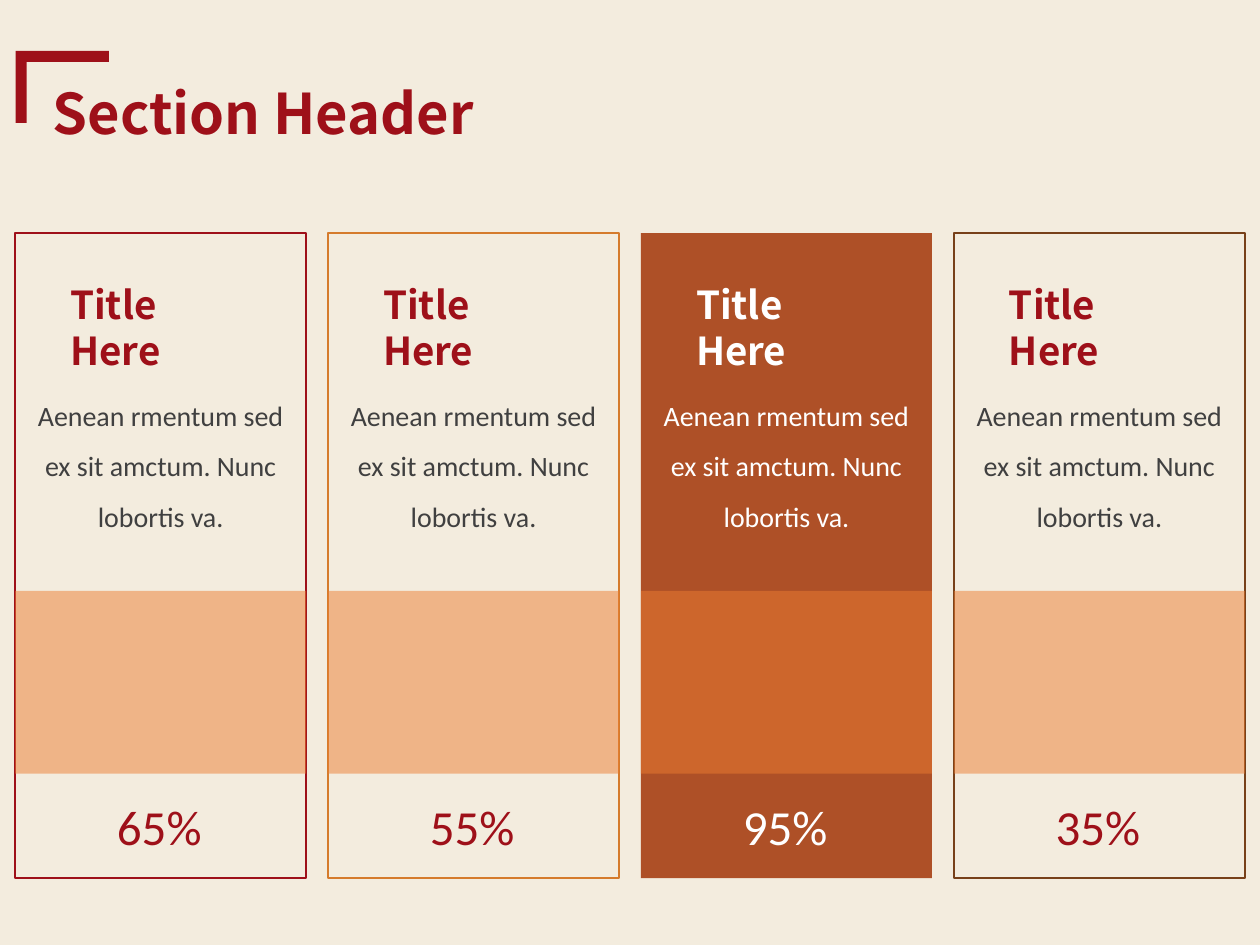
from dataclasses import dataclass

from lxml import etree
from pptx import Presentation
from pptx.dml.color import RGBColor
from pptx.enum.shapes import MSO_SHAPE
from pptx.enum.text import MSO_ANCHOR, MSO_AUTO_SIZE, PP_ALIGN
from pptx.oxml.ns import qn
from pptx.util import Inches, Pt

RECTANGLE = MSO_SHAPE.RECTANGLE
CORNER = MSO_SHAPE.CORNER
LEFT = PP_ALIGN.LEFT
CENTER = PP_ALIGN.CENTER
TOP = MSO_ANCHOR.TOP
GROW = MSO_AUTO_SIZE.SHAPE_TO_FIT_TEXT

TITLE_ONLY = 5
SLIDE_WIDTH = 10
SLIDE_HEIGHT = 7.5
RED = "9E1019"
GREY = "404040"
WHITE = "FFFFFF"
RUST = "AE5027"
ORANGE = "ED7D31"
CREAM = "F3ECDE"

CARD_TOP = 1.85
CARD_WIDTH = 2.31
CARD_HEIGHT = 5.12
SIDE_MARGIN = 0.12


@dataclass
class Card:
    percent: str
    line: str | None = None
    fill: str | None = None
    accent: str = RED
    body: str = GREY


CARDS = [
    Card("65%", line=RED),
    Card("55%", line="D57B2C"),
    Card("95%", fill=RUST, accent=WHITE, body=WHITE),
    Card("35%", line="774019"),
]


def set_color(color_format, value: str):
    color_format.rgb = RGBColor.from_string(value)


def place(shape, left: float, top: float, width: float, height: float):
    shape.left, shape.top = Inches(left), Inches(top)
    shape.width, shape.height = Inches(width), Inches(height)


def write_text(shape, text: str, *, size: float, font: str, color: str, bold: bool = False,
               align=LEFT, spacing: float = 1.0, wrap: bool = True):
    frame = shape.text_frame
    frame.text = text
    frame.word_wrap = wrap
    frame.auto_size = GROW
    frame.vertical_anchor = TOP
    paragraph = frame.paragraphs[0]
    paragraph.alignment = align
    paragraph.line_spacing = spacing
    paragraph.space_before = Pt(0)
    run_font = paragraph.runs[0].font
    run_font.size = Pt(size)
    run_font.name = font
    run_font.bold = bold
    set_color(run_font.color, color)


def add_text(slide, box: tuple, text: str, **text_format):
    shape = slide.shapes.add_textbox(*map(Inches, box))
    write_text(shape, text, **text_format)


def add_box(slide, kind, box: tuple, fill: str | None = None, line: str | None = None,
            opacity: int = 100):
    shape = slide.shapes.add_shape(kind, *map(Inches, box))
    shape.shadow.inherit = False
    if fill:
        shape.fill.solid()
        set_color(shape.fill.fore_color, fill)
        if opacity < 100:
            color = shape.element.spPr.find(qn("a:solidFill"))[0]
            etree.SubElement(color, qn("a:alpha"), val=str(opacity * 1000))
    else:
        shape.fill.background()
    if line:
        set_color(shape.line.color, line)
        shape.line.width = Pt(1.5)
    else:
        shape.line.fill.background()
    return shape


def add_header(slide):
    title = slide.shapes.title
    place(title, 0.32, 0.31, 3.84, 0.8)
    write_text(title, "Section Header", size=32, font="Noto Sans CJK JP",
               color=RED, bold=True, spacing=1.5)
    bracket = add_box(slide, CORNER, (0.21, 0.32, 0.57, 0.74), fill=RED)
    bracket.rotation = 90
    bracket.adjustments[0] = 0.15
    bracket.adjustments[1] = 0.15


def add_card(slide, card: Card, left: float):
    add_box(slide, RECTANGLE, (left, CARD_TOP, CARD_WIDTH, CARD_HEIGHT),
            fill=card.fill, line=card.line)
    add_text(slide, (left + 0.34, 2.18, 1.6, 0.47), "Title Here", size=22,
             font="Noto Sans CJK SC", color=card.accent, bold=True)
    add_text(slide, (left + 0.08, 2.98, 2.15, 1.26),
             "Aenean rmentum sed ex sit amctum. Nunc lobortis va.", size=16,
             font="Calibri", color=card.body, align=CENTER, spacing=1.5)
    add_text(slide, (left + 0.71, 6.27, 0.89, 0.57), card.percent, size=28,
             font="Calibri", color=card.accent, wrap=False)
    add_box(slide, RECTANGLE, (left, 4.69, CARD_WIDTH, 1.45), fill=ORANGE, opacity=50)


def main():
    presentation = Presentation()
    presentation.slide_width = Inches(SLIDE_WIDTH)
    presentation.slide_height = Inches(SLIDE_HEIGHT)
    slide = presentation.slides.add_slide(presentation.slide_layouts[TITLE_ONLY])
    slide.background.fill.solid()
    set_color(slide.background.fill.fore_color, CREAM)
    add_header(slide)
    pitch = (SLIDE_WIDTH - 2 * SIDE_MARGIN - CARD_WIDTH) / (len(CARDS) - 1)
    for index, card in enumerate(CARDS):
        add_card(slide, card, SIDE_MARGIN + index * pitch)
    presentation.save("out.pptx")


if __name__ == "__main__":
    main()
